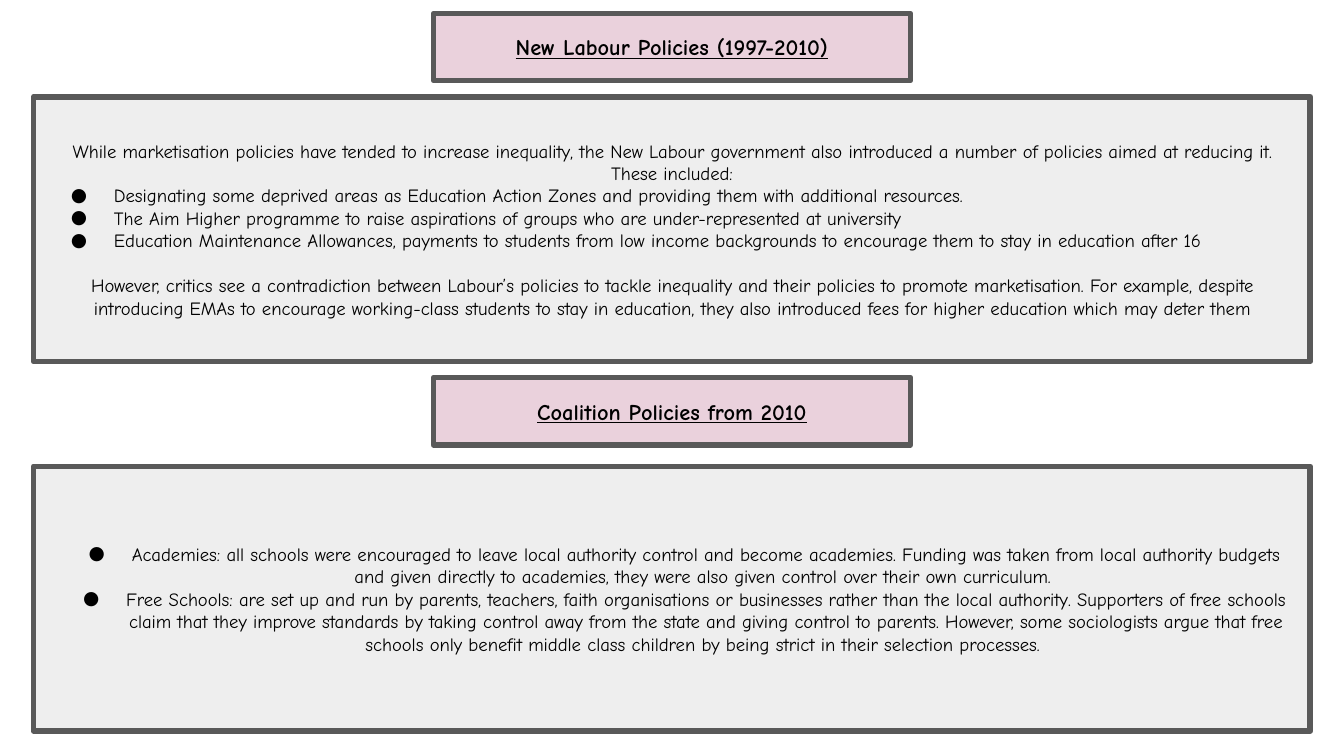
from lxml import etree
from pptx import Presentation
from pptx.dml.color import RGBColor
from pptx.enum import shapes, text
from pptx.oxml import ns
from pptx.util import Inches, Pt

MID, LEFT = text.PP_ALIGN.CENTER, text.PP_ALIGN.LEFT

THEME = {
    "font": "Comic Neue", "ink": "000000", "edge": "595959", "line": 3,
    "head": {"fill": "EAD1DC", "size": 12},
    "body": {"fill": "EEEEEE", "size": 10},
}

PARTS = [
    {
        "title": "New Labour Policies (1997-2010)",
        "tops": (0.1, 0.72),
        "intro": "While marketisation policies have tended to increase inequality, the New Labour government also introduced a number of policies aimed at reducing it. These included:",
        "align": LEFT,
        "points": [
            "Designating some deprived areas as Education Action Zones and providing them with additional resources.",
            "The Aim Higher programme to raise aspirations of groups who are under-represented at university",
            "Education Maintenance Allowances, payments to students from low income backgrounds to encourage them to stay in education after 16",
        ],
        "close": "However, critics see a contradiction between Labour’s policies to tackle inequality and their policies to promote marketisation. For example, despite introducing EMAs to encourage working-class students to stay in education, they also introduced fees for higher education which may deter them",
    },
    {
        "title": "Coalition Policies from 2010",
        "tops": (2.81, 3.47),
        "align": MID,
        "points": [
            "Academies: all schools were encouraged to leave local authority control and become academies. Funding was taken from local authority budgets and given directly to academies, they were also given control over their own curriculum. ",
            "Free Schools: are set up and run by parents, teachers, faith organisations or businesses rather than the local authority. Supporters of free schools claim that they improve standards by taking control away from the state and giving control to parents. However, some sociologists argue that free schools only benefit middle class children by being strict in their selection processes. ",
        ],
    },
]

WIDE = 10
HIGH = WIDE * 9 / 16
SIZES = {"head": (3.55, 0.5), "body": (9.5, 1.97)}


def color(key):
    return RGBColor.from_string(key)


def add_box(slide, kind, top):
    width, height = SIZES[kind]
    box = slide.shapes.add_shape(
        shapes.MSO_SHAPE.RECTANGLE,
        Inches((WIDE - width) / 2), Inches(top), Inches(width), Inches(height))
    box.shadow.inherit = False
    box.fill.solid()
    box.fill.fore_color.rgb = color(THEME[kind]["fill"])
    box.line.color.rgb = color(THEME["edge"])
    box.line.width = Pt(THEME["line"])
    frame = box.text_frame
    frame.word_wrap = True
    frame.vertical_anchor = text.MSO_ANCHOR.MIDDLE
    frame.margin_left = frame.margin_right = Inches(0.1)
    frame.margin_top = frame.margin_bottom = Inches(0.1)
    return frame


def add_bullet(para, size):
    props = para._p.get_or_add_pPr()
    props.set("marL", str(Inches(0.5)))
    props.set("indent", str(Inches(-0.32)))
    tint = etree.SubElement(props, ns.qn("a:buClr"))
    etree.SubElement(tint, ns.qn("a:srgbClr"), val=THEME["ink"])
    etree.SubElement(props, ns.qn("a:buSzPts"), val=str(size * 100))
    etree.SubElement(props, ns.qn("a:buFont"), typeface=THEME["font"])
    etree.SubElement(props, ns.qn("a:buChar"), char="●")


def write(frame, kind, rows):
    size = THEME[kind]["size"]
    for spot, (words, align, bullet, gap) in enumerate(rows):
        para = frame.add_paragraph() if spot else frame.paragraphs[0]
        para.text = words
        para.alignment = align
        if gap:
            para.space_before = Pt(gap)
        if bullet:
            add_bullet(para, size)
        font = para.font
        font.name = THEME["font"]
        font.size = Pt(size)
        font.color.rgb = color(THEME["ink"])
        font.bold = font.underline = kind == "head"


def main():
    deck = Presentation()
    deck.slide_width, deck.slide_height = Inches(WIDE), Inches(HIGH)
    slide = deck.slides.add_slide(deck.slide_layouts[6])
    for part in PARTS:
        head, body = part["tops"]
        write(add_box(slide, "head", head), "head", [(part["title"], MID, False, 0)])
        rows = [(point, part["align"], True, 0) for point in part["points"]]
        if "intro" in part:
            rows.insert(0, (part["intro"], MID, False, 0))
        if "close" in part:
            rows.append((part["close"], MID, False, 12))
        write(add_box(slide, "body", body), "body", rows)
    deck.save("out.pptx")


if __name__ == "__main__":
    main()
